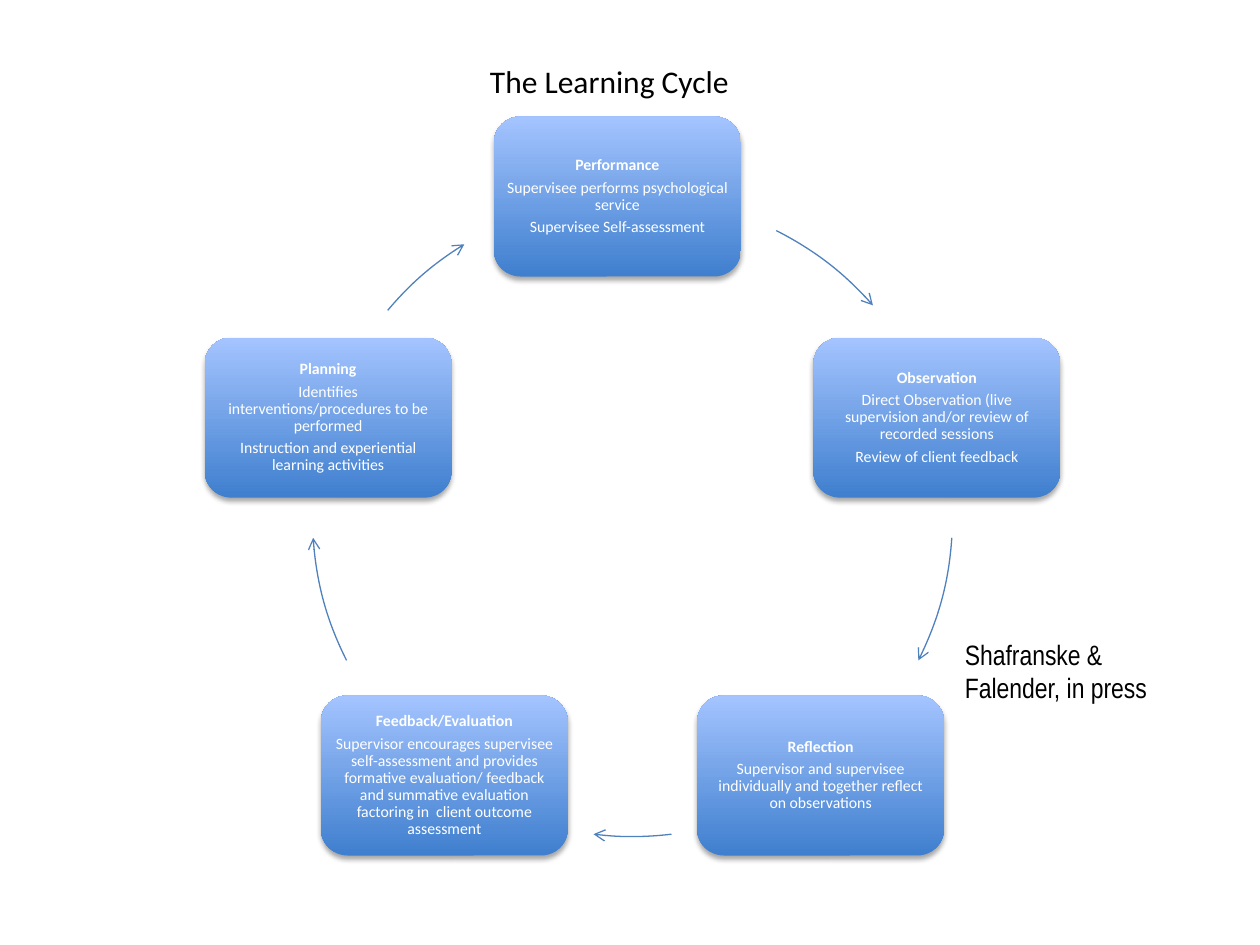
from dataclasses import dataclass
from math import cos, radians, sin

from lxml.etree import SubElement as Sub
from pptx import Presentation
from pptx.dml.color import RGBColor as RGB
from pptx.enum.shapes import MSO_SHAPE as Kind
from pptx.enum.text import MSO_ANCHOR as Anchor, MSO_AUTO_SIZE as Fit
from pptx.enum.text import PP_ALIGN as Align
from pptx.oxml.ns import qn
from pptx.util import Inches, Pt


@dataclass(frozen=True)
class Theme:
    low: RGB = RGB.from_string("3F7FCE")
    high: RGB = RGB.from_string("A4C4FF")
    arrow: RGB = RGB.from_string("4F81BD")
    white: RGB = RGB.from_string("FFFFFF")
    black: RGB = RGB.from_string("000000")
    body: str = "Calibri"
    narrow: str = "Arial Narrow"
    small: float = 9
    cite: float = 16
    title: float = 18


THEME = Theme()

# Ring geometry in inches; angles run clockwise from the top
MID_X, MID_Y, RADIUS = 5.02, 4.1, 2.54
BOX_W, BOX_H = 1.96, 1.27

# Heading, body lines, sideways shift of the box
STEPS = [
    ("Performance", ["Supervisee performs psychological service",
                     "Supervisee Self-assessment"], -0.12),
    ("Observation", ["Direct Observation (live supervision and/or review of "
                     "recorded sessions", "Review of client feedback"], 0),
    ("Reflection", ["Supervisor and supervisee individually and together "
                    "reflect on observations"], 0),
    ("Feedback/Evaluation", ["Supervisor encourages supervisee self-assessment "
                             "and provides formative evaluation/ feedback and "
                             "summative evaluation factoring in  client outcome "
                             "assessment"], 0),
    ("Planning", ["Identifies interventions/procedures to be performed",
                  "Instruction and experiential learning activities"], 0),
]
ARCS = [(26.7, 48.7), (93.8, 116.7), (173, 187), (243.3, 266.2),
        (310.1, 328.3)]


def spot(angle):
    """Point on the ring, in inches."""
    turn = radians(angle)
    return MID_X + RADIUS * sin(turn), MID_Y - RADIUS * cos(turn)


def write(frame, text, *, size, color, font=THEME.body, bold=False,
          align=Align.LEFT, line=None, after=None, first=True):
    para = frame.paragraphs[0] if first else frame.add_paragraph()
    para.alignment = align
    para.line_spacing = line
    para.space_after = after
    run = para.add_run()
    run.text = text
    run.font.size = Pt(size)
    run.font.name = font
    run.font.bold = bold
    run.font.color.rgb = color


def add_label(slide, text, x, y, w, h, **style):
    box = slide.shapes.add_textbox(Inches(x), Inches(y), Inches(w), Inches(h))
    box.text_frame.word_wrap = True
    box.text_frame.auto_size = Fit.SHAPE_TO_FIT_TEXT
    write(box.text_frame, text, color=THEME.black, **style)


def add_shade(shape):
    """Soft shadow straight below the shape."""
    shape.shadow.inherit = False
    effects = shape._element.spPr.find(qn("a:effectLst"))
    shade = Sub(effects, qn("a:outerShdw"), blurRad=str(Pt(3.1)),
                dist=str(Pt(1.8)), dir="5400000", rotWithShape="0")
    color = Sub(shade, qn("a:srgbClr"), val=str(THEME.black))
    Sub(color, qn("a:alpha"), val="35000")


def add_step(slide, angle, head, lines, shift):
    x, y = spot(angle)
    box = slide.shapes.add_shape(
        Kind.ROUNDED_RECTANGLE, Inches(x + shift - BOX_W / 2),
        Inches(y - BOX_H / 2), Inches(BOX_W), Inches(BOX_H))
    box.fill.gradient()
    box.fill.gradient_angle = 90
    for stop, color in zip(box.fill.gradient_stops, (THEME.low, THEME.high)):
        stop.color.rgb = color
    box.line.fill.background()
    add_shade(box)

    frame = box.text_frame
    frame.word_wrap = True
    frame.vertical_anchor = Anchor.MIDDLE
    frame.margin_left = frame.margin_right = Inches(0.04)
    frame.margin_top = frame.margin_bottom = Inches(0.04)
    for i, text in enumerate([head, *lines]):
        write(frame, text, size=THEME.small, color=THEME.white, bold=i == 0,
              align=Align.CENTER, line=0.9, after=Pt(0.35 * THEME.small),
              first=i == 0)


def add_arc(slide, start, end):
    """Arrow along the ring; its frame is the square around the whole ring."""
    left, top = Inches(MID_X - RADIUS), Inches(MID_Y - RADIUS)
    side, reach = Inches(2 * RADIUS), str(Inches(RADIUS))
    x, y = (Inches(v) for v in spot(start))
    pen = slide.shapes.build_freeform(left, top)
    pen.add_line_segments([(left + side, top + side)], close=False)
    pen.move_to(x, y)
    arc = pen.convert_to_shape()

    # Keep the last move only, then follow the circle
    track = next(arc._element.iter(qn("a:path")))
    for step in list(track)[:-1]:
        track.remove(step)
    Sub(track, qn("a:arcTo"), wR=reach, hR=reach,
        stAng=str(round((start - 90) % 360 * 60000)),
        swAng=str(round((end - start) * 60000)))

    arc.fill.background()
    arc.shadow.inherit = False
    arc.line.color.rgb = THEME.arrow
    arc.line.width = Pt(0.75)
    Sub(arc.line._get_or_add_ln(), qn("a:tailEnd"), type="arrow")


def main():
    deck = Presentation()
    deck.slide_width, deck.slide_height = Inches(10), Inches(7.5)
    slide = deck.slides.add_slide(deck.slide_layouts[6])

    # Cycle of steps, each followed by its arrow
    for i, (step, arc) in enumerate(zip(STEPS, ARCS)):
        add_step(slide, i * 360 / len(STEPS), *step)
        add_arc(slide, *arc)

    # Citation and title
    add_label(slide, "Shafranske & Falender, in press", 7.56, 5.01, 1.98, 0.64,
              size=THEME.cite, font=THEME.narrow)
    add_label(slide, "The Learning Cycle", 3.79, 0.44, 2.43, 0.4,
              size=THEME.title)

    deck.save("out.pptx")


if __name__ == "__main__":
    main()
